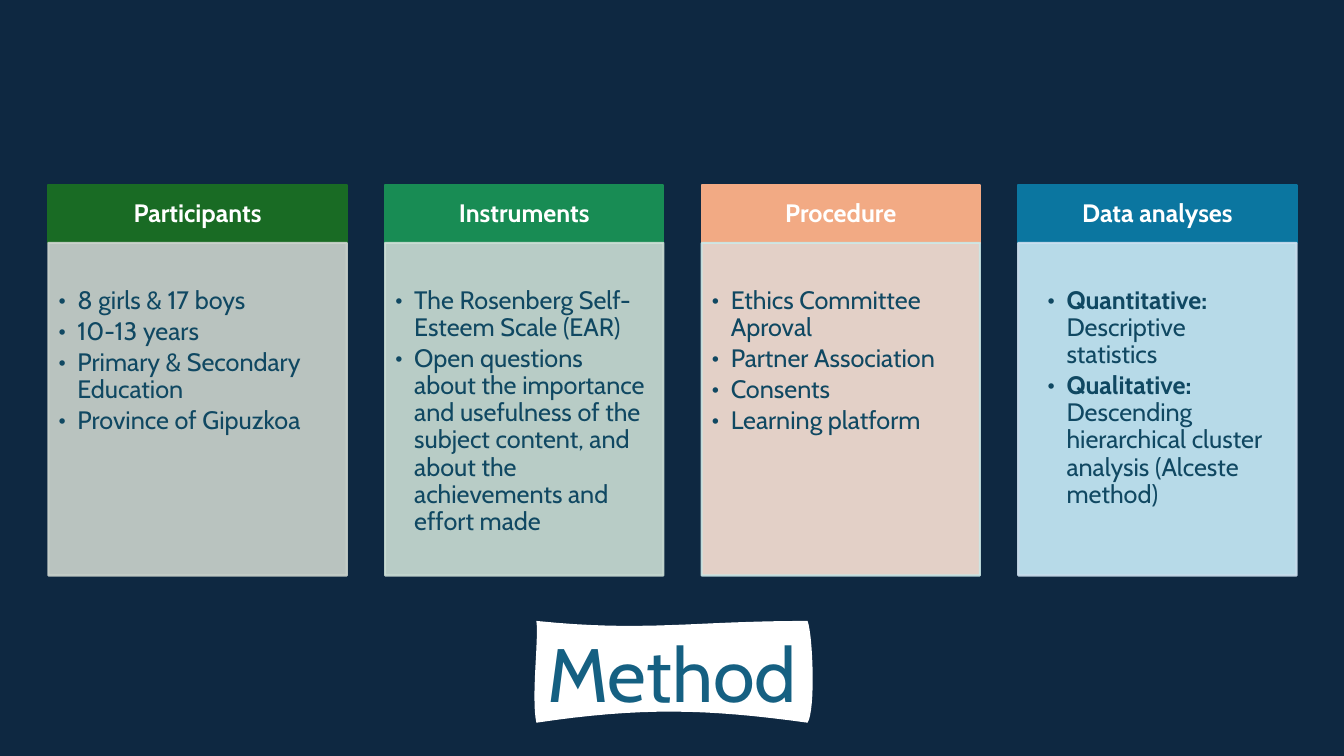
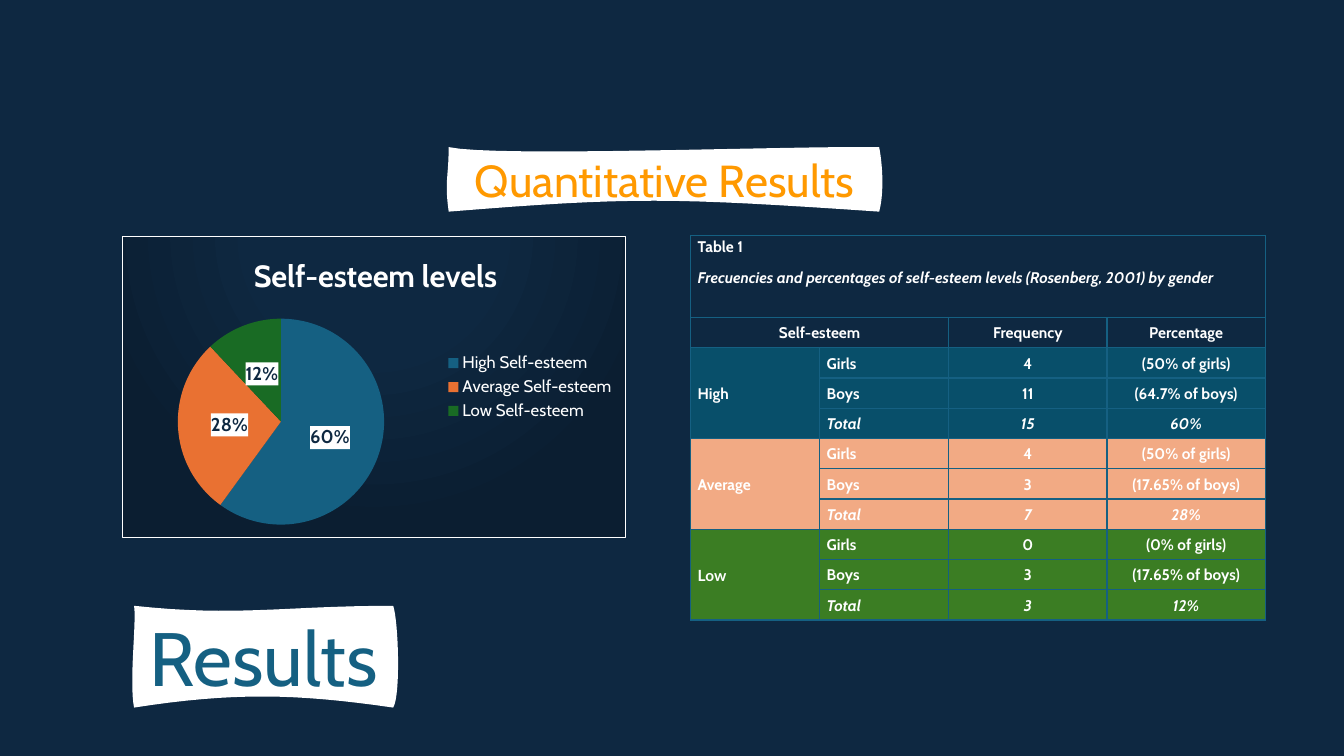
from pptx import Presentation
from pptx.chart.data import CategoryChartData
from pptx.dml.color import RGBColor
from pptx.enum.chart import XL_CHART_TYPE, XL_LABEL_POSITION, XL_LEGEND_POSITION
from pptx.enum.shapes import MSO_SHAPE
from pptx.enum.text import MSO_ANCHOR, MSO_AUTO_SIZE, PP_ALIGN
from pptx.oxml import parse_xml
from pptx.oxml.ns import nsdecls, qn
from pptx.oxml.xmlchemy import OxmlElement
from pptx.util import Inches, Pt

FONT = "Cabin"
NAVY = RGBColor(0x0E, 0x28, 0x41)
WHITE = RGBColor(0xFF, 0xFF, 0xFF)
BLUE = RGBColor(0x15, 0x60, 0x82)
GOLD = RGBColor(0xFF, 0x99, 0x00)
INK = RGBColor(0x10, 0x48, 0x62)
GREEN = RGBColor(0x19, 0x6B, 0x24)
EMERALD = RGBColor(0x18, 0x8C, 0x54)
PEACH = RGBColor(0xF2, 0xAA, 0x84)
AZURE = RGBColor(0x0B, 0x76, 0xA0)
ORANGE = RGBColor(0xE9, 0x71, 0x32)
TEAL = RGBColor(0x08, 0x4F, 0x6A)
LEAF = RGBColor(0x3B, 0x7D, 0x23)
PALE_GREY = RGBColor(0xCC, 0xD4, 0xCD)
PALE_GREEN = RGBColor(0xCB, 0xDE, 0xD5)
PALE_PEACH = RGBColor(0xFB, 0xE3, 0xD6)
PALE_AQUA = RGBColor(0xCB, 0xE8, 0xE7)
PALE_BLUE = RGBColor(0xCA, 0xEE, 0xFB)
MIST = RGBColor(0xCC, 0xDF, 0xEF)

WAVE = [
    [(0, 0), (0.4, 0.11), (0.58, 0), (1, 0)],
    [(1, 0), (1.02, 0.15), (1.03, 0.87), (1, 1)],
    [(1, 1), (0.62, 0.86), (0.38, 0.85), (0, 1)],
    [(0, 1), (-0.02, 0.75), (0.01, 0.16), (0, 0)],
]
WIDE_WAVE = [
    [(0, 0), (0.11, 0.16), (0.78, -0.02), (1, 0)],
    [(1, 0), (1.01, 0.36), (1.01, 0.75), (1, 1)],
    [(1, 1), (0.51, 0.78), (0.43, 0.77), (0, 1)],
    [(0, 1), (-0.01, 0.5), (0, 0.48), (0, 0)],
]

COLUMNS = [
    ("Participants", 2.96, GREEN, PALE_GREY, PALE_GREY, 0.19, [
        ("", "8 girls & 17 boys"),
        ("", "10-13 years"),
        ("", "Primary & Secondary Education"),
        ("", "Province of Gipuzkoa"),
    ]),
    ("Instruments", 2.76, EMERALD, PALE_GREEN, PALE_GREEN, 0.19, [
        ("", "The Rosenberg Self-Esteem Scale (EAR)"),
        ("", "Open questions about the importance and usefulness of the subject "
             "content, and about the achievements and effort made"),
    ]),
    ("Procedure", 2.76, PEACH, PALE_PEACH, PALE_AQUA, 0.19, [
        ("", "Ethics Committee Aproval"),
        ("", "Partner Association"),
        ("", "Consents"),
        ("", "Learning platform"),
    ]),
    ("Data analyses", 2.76, AZURE, PALE_BLUE, MIST, 0.38, [
        ("Quantitative:", " Descriptive statistics"),
        ("Qualitative:", " Descending hierarchical cluster analysis (Alceste method)"),
    ]),
]

LEVELS = [
    ("High", FONT, TEAL, [("4", "(50% of girls)"), ("11", "(64.7% of boys)"), ("15", "60%")]),
    ("Average", FONT, PEACH, [("4", "(50% of girls)"), ("3", "(17.65% of boys)"), ("7", "28%")]),
    ("Low", "Lato", LEAF, [("0", "(0% of girls)"), ("3", "(17.65% of boys)"), ("3", "12%")]),
]


def add_text(p, text, size=18, color=WHITE, bold=False, italic=False, font=FONT):
    """Add a formatted run to a paragraph."""
    r = p.add_run()
    r.text = text
    r.font.name, r.font.size = font, Pt(size)
    r.font.bold, r.font.italic = bold, italic
    r.font.color.rgb = color


def set_margins(box, left, top, right, bottom):
    """Set the inner margins of a text frame or cell."""
    box.margin_left, box.margin_top = Inches(left), Inches(top)
    box.margin_right, box.margin_bottom = Inches(right), Inches(bottom)


def add_bullet(p, indent):
    """Give a paragraph a hanging bullet."""
    pPr = p._p.get_or_add_pPr()
    pPr.set("marL", str(Inches(indent)))
    pPr.set("indent", str(-Inches(0.19)))
    for tag, name, value in (("a:buFont", "typeface", FONT), ("a:buChar", "char", "•")):
        bullet = OxmlElement(tag)
        bullet.set(name, value)
        pPr.append(bullet)


def set_opacity(shape, percent):
    """Make the fill and line of a shape partly transparent."""
    for color in shape._element.spPr.iter(qn("a:srgbClr")):
        alpha = OxmlElement("a:alpha")
        alpha.set("val", str(percent * 1000))
        color.append(alpha)


def add_box(s, left, top, width, height, fill, line):
    """Add a plain rectangle."""
    box = s.shapes.add_shape(MSO_SHAPE.RECTANGLE, Inches(left), Inches(top),
                             Inches(width), Inches(height))
    box.shadow.inherit = False
    box.fill.solid()
    box.fill.fore_color.rgb = fill
    box.line.color.rgb = line
    box.line.width = Pt(1.5)
    box.text_frame.word_wrap = True
    return box


def add_column(s, left, heading, width, head_fill, body_fill, body_line, indent, items):
    """Add a heading box with a bulleted box below it."""
    head = add_box(s, left, 1.84, width, 0.57, head_fill, head_fill)
    tf = head.text_frame
    tf.vertical_anchor = MSO_ANCHOR.MIDDLE
    p = tf.paragraphs[0]
    p.alignment, p.line_spacing = PP_ALIGN.CENTER, 0.9
    add_text(p, heading, bold=True)

    body = add_box(s, left, 2.41, width, 3.3, body_fill, body_line)
    set_opacity(body, 90)
    tf = body.text_frame
    tf.vertical_anchor = MSO_ANCHOR.TOP
    set_margins(tf, 0.1, 0.44, 0.18, 0.16)
    for i, (lead, text) in enumerate(items):
        p = tf.add_paragraph() if i else tf.paragraphs[0]
        p.alignment, p.line_spacing, p.space_after = PP_ALIGN.LEFT, 0.9, Pt(2.7)
        add_bullet(p, indent)
        if lead:
            add_text(p, lead, color=INK, bold=True)
        add_text(p, text, color=INK)


def curve_points(curve, steps=16):
    """Return points along a cubic curve after its start."""
    points = []
    for i in range(1, steps + 1):
        t = i / steps
        weights = ((1 - t) ** 3, 3 * t * (1 - t) ** 2, 3 * t * t * (1 - t), t ** 3)
        points.append(tuple(sum(w * c[axis] for w, c in zip(weights, curve)) for axis in (0, 1)))
    return points


def add_banner(s, left, top, width, height, outline):
    """Add a white banner with wavy sides."""
    points = [(Inches(left + x * width), Inches(top + y * height))
              for curve in outline for x, y in curve_points(curve)]
    builder = s.shapes.build_freeform(*points[-1])
    builder.add_line_segments(points, close=True)
    banner = builder.convert_to_shape()
    banner.shadow.inherit = False
    banner.fill.solid()
    banner.fill.fore_color.rgb = WHITE
    banner.line.fill.background()
    return banner


def write_centred(shape, text, size, color):
    """Write one centred, unwrapped line in a shape."""
    tf = shape.text_frame
    tf.word_wrap, tf.auto_size = False, MSO_AUTO_SIZE.NONE
    tf.vertical_anchor = MSO_ANCHOR.MIDDLE
    p = tf.paragraphs[0]
    p.alignment = PP_ALIGN.CENTER
    add_text(p, text, size=size, color=color)


def add_titled_slide(prs, text, left, top, width):
    """Add a slide with its title on a wavy banner."""
    s = prs.slides.add_slide(prs.slide_layouts[5])
    title, height = s.shapes.title, 1.01
    title.left, title.top = Inches(left), Inches(top)
    title.width, title.height = Inches(width), Inches(height)
    write_centred(title, text, 54, BLUE)
    banner = add_banner(s, left, top, width, height, WAVE)
    title._element.addprevious(banner._element)
    return s


def place_chart_part(element, **values):
    """Give a chart part a manual layout in fractions of the chart."""
    inner = '<c:layoutTarget val="inner"/>' if "w" in values else ""
    modes = "".join(f'<c:{k}Mode val="edge"/>' for k in "xy")
    sizes = "".join(f'<c:{k} val="{v}"/>' for k, v in values.items())
    for old in element.findall(qn("c:layout")):
        element.remove(old)
    layout = parse_xml(f'<c:layout {nsdecls("c")}><c:manualLayout>{inner}{modes}{sizes}'
                       '</c:manualLayout></c:layout>')
    text = element.find(qn("c:tx"))
    if text is None:
        element.insert(0, layout)
    else:
        text.addnext(layout)


def add_pie(s):
    """Add the pie chart of self-esteem levels."""
    data = CategoryChartData()
    data.categories = [f"{level} Self-esteem" for level, *_ in LEVELS]
    data.add_series("Series 1", (60, 28, 12))
    chart = s.shapes.add_chart(XL_CHART_TYPE.PIE, Inches(1.21), Inches(2.34),
                               Inches(5), Inches(3), data).chart
    chart.font.name, chart.font.size = FONT, Pt(10)
    chart.font.color.rgb = WHITE
    chart.has_title = True
    add_text(chart.chart_title.text_frame.paragraphs[0], "Self-esteem levels", size=22, bold=True)
    chart.has_legend = True
    legend = chart.legend
    legend.position, legend.include_in_layout = XL_LEGEND_POSITION.RIGHT, False
    legend.font.name, legend.font.size = FONT, Pt(12)
    legend.font.color.rgb = WHITE

    plot = chart.plots[0]
    plot.vary_by_categories = True
    for i, color in enumerate((BLUE, ORANGE, GREEN)):
        fill = plot.series[0].points[i].format.fill
        fill.solid()
        fill.fore_color.rgb = color
    plot.has_data_labels = True
    labels = plot.data_labels
    labels.show_percentage, labels.show_value = True, False
    labels.number_format, labels.number_format_is_linked = "0%", False
    labels.position = XL_LABEL_POSITION.CENTER
    labels.font.name, labels.font.size, labels.font.bold = FONT, Pt(13.3), True
    labels.font.color.rgb = NAVY
    labels._element.find(qn("c:txPr")).addprevious(parse_xml(
        f'<c:spPr {nsdecls("c", "a")}><a:solidFill><a:srgbClr val="{WHITE}"/></a:solidFill></c:spPr>'))

    root = chart._chartSpace.chart
    place_chart_part(root.find(qn("c:title")), x=0.25, y=0.04)
    place_chart_part(root.plotArea, x=0.11, y=0.27, w=0.41, h=0.69)
    stops = "".join(f'<a:gs pos="{pos}"><a:srgbClr val="{color}"/></a:gs>'
                    for pos, color in ((0, NAVY), (39000, NAVY), (100000, "0B1E31")))
    root.addnext(parse_xml(
        f'<c:spPr {nsdecls("c", "a")}><a:gradFill><a:gsLst>{stops}</a:gsLst><a:path path="circle">'
        '<a:fillToRect l="50000" t="-80000" r="50000" b="180000"/></a:path></a:gradFill>'
        f'<a:ln w="9525"><a:solidFill><a:srgbClr val="{WHITE}"/></a:solidFill></a:ln></c:spPr>'))


def format_cell(cell, fill):
    """Give a cell its fill, margins and borders."""
    tcPr = cell._tc.get_or_add_tcPr()
    for side in "LRTB":
        tcPr.append(parse_xml(f'<a:ln{side} {nsdecls("a")} w="12700"><a:solidFill>'
                              f'<a:srgbClr val="{BLUE}"/></a:solidFill></a:ln{side}>'))
    cell.fill.solid()
    cell.fill.fore_color.rgb = fill
    cell.vertical_anchor = MSO_ANCHOR.MIDDLE
    set_margins(cell, 0.07, 0, 0.07, 0)


def write_cell(p, text, centred=False, italic=False, font=FONT):
    """Write a bold line of table text."""
    p.line_spacing = 1.07
    p.alignment = PP_ALIGN.CENTER if centred else PP_ALIGN.LEFT
    add_text(p, text, size=11, bold=True, italic=italic, font=font)


def add_level_table(s):
    """Add the table of levels by gender."""
    widths, heights = (1.28, 1.28, 1.57, 1.57), [0.81] + [0.3] * 10
    table = s.shapes.add_table(len(heights), len(widths), Inches(6.85), Inches(2.34),
                               Inches(sum(widths)), Inches(sum(heights))).table
    table.first_row = table.horz_banding = False
    for column, width in zip(table.columns, widths):
        column.width = Inches(width)
    fills = [NAVY] * 2 + [fill for _, _, fill, rows in LEVELS for _ in rows]
    for row, height, fill in zip(table.rows, heights, fills):
        row.height = Inches(height)
        for cell in row.cells:
            format_cell(cell, fill)

    caption = table.cell(0, 0)
    caption.merge(table.cell(0, 3))
    caption.vertical_anchor = MSO_ANCHOR.TOP
    p = caption.text_frame.paragraphs[0]
    p.space_after = Pt(8)
    write_cell(p, "Table 1")
    write_cell(caption.text_frame.add_paragraph(),
               "Frecuencies and percentages of self-esteem levels (Rosenberg, 2001) by gender",
               italic=True)
    table.cell(1, 0).merge(table.cell(1, 1))
    for c, text in ((0, "Self-esteem"), (2, "Frequency"), (3, "Percentage")):
        write_cell(table.cell(1, c).text_frame.paragraphs[0], text, centred=True)
    for i, (level, font, _, rows) in enumerate(LEVELS):
        top = 2 + 3 * i
        table.cell(top, 0).merge(table.cell(top + 2, 0))
        write_cell(table.cell(top, 0).text_frame.paragraphs[0], level, font=font)
        for r, (group, values) in enumerate(zip(("Girls", "Boys", "Total"), rows), top):
            for c, text in enumerate((group, *values), 1):
                write_cell(table.cell(r, c).text_frame.paragraphs[0], text,
                           centred=c > 1, italic=group == "Total")


def main():
    """Build the deck."""
    prs = Presentation()
    prs.slide_width, prs.slide_height = Inches(13.33), Inches(7.5)
    background = prs.slide_master.background.fill
    background.solid()
    background.fore_color.rgb = NAVY

    s = add_titled_slide(prs, "Method", 5.32, 6.16, 2.69)
    left = 0.48
    for heading, width, *rest in COLUMNS:
        add_column(s, left, heading, width, *rest)
        left += width + 0.38

    s = add_titled_slide(prs, "Results", 1.33, 6.01, 2.57)
    add_pie(s)
    add_level_table(s)
    banner = add_banner(s, 4.45, 1.46, 4.27, 0.64, WIDE_WAVE)
    write_centred(banner, "Quantitative Results", 32, GOLD)
    prs.save("out.pptx")


if __name__ == "__main__":
    main()
